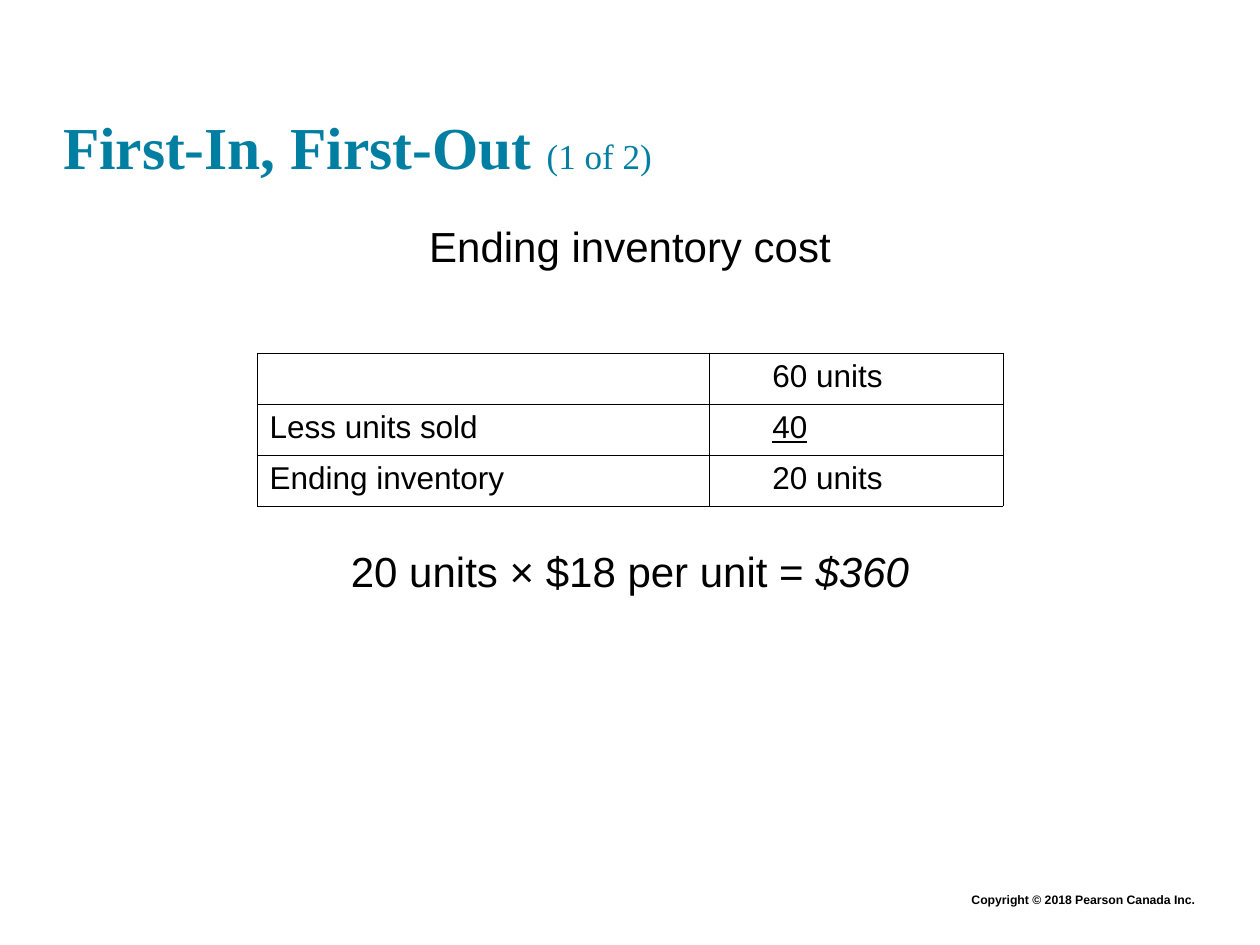
from dataclasses import dataclass

from lxml import etree
from pptx import Presentation
from pptx.dml.color import RGBColor
from pptx.enum.text import MSO_ANCHOR, MSO_AUTO_SIZE, PP_ALIGN
from pptx.oxml.ns import qn
from pptx.util import Cm, Pt

BOTTOM = MSO_ANCHOR.BOTTOM
NO_FIT = MSO_AUTO_SIZE.NONE
LEFT, CENTER, RIGHT = PP_ALIGN.LEFT, PP_ALIGN.CENTER, PP_ALIGN.RIGHT


@dataclass
class Theme:
    teal: RGBColor = RGBColor(0x00, 0x7F, 0xA3)
    black: RGBColor = RGBColor(0, 0, 0)
    head_font: str = "Times New Roman"
    body_font: str = "Arial"
    title: int = 34
    counter: int = 20
    body: int = 24
    cell: int = 18
    footer: int = 7
    border: float = 0.25


theme = Theme()


def write(p, texts, size, align=LEFT, color=theme.black, font=theme.body_font):
    """Fill a paragraph with runs, all in one base style."""
    p.alignment = align
    p.space_before = Pt(0)
    for text in texts:
        r = p.add_run()
        r.text = text
        r.font.name = font
        r.font.size = Pt(size)
        r.font.color.rgb = color
    return p.runs


def place(sp, top, height):
    """Set a placeholder on the full content width, without insets."""
    sp.left, sp.top, sp.width, sp.height = Cm(1.27), Cm(top), Cm(22.86), Cm(height)
    tf = sp.text_frame
    tf.margin_left = tf.margin_top = tf.margin_right = tf.margin_bottom = 0
    tf.auto_size = NO_FIT
    return tf


prs = Presentation()
prs.slide_width, prs.slide_height = Cm(25.4), Cm(19.05)
s = prs.slides.add_slide(prs.slide_layouts[3])

# Title
tf = place(s.shapes.title, 0.61, 3.05)
tf.vertical_anchor = BOTTOM
heading, counter = write(tf.paragraphs[0], ["First-In, First-Out ", "(1 of 2)"],
                         theme.title, color=theme.teal, font=theme.head_font)
heading.font.bold = True
counter.font.bold = False
counter.font.size = Pt(theme.counter)

# Centred lines above and below the table
lines = [
    (1, 4.45, 1.47, ["Ending inventory cost"]),
    (2, 11.0, 2.11, ["20 units × $18 per unit = ", "$360"]),
]
for idx, top, height, texts in lines:
    p = place(s.placeholders[idx], top, height).paragraphs[0]
    pPr = p._p.get_or_add_pPr()
    pPr.set("marL", "0")
    pPr.set("indent", "0")
    etree.SubElement(pPr, qn("a:buNone"))
    runs = write(p, texts, theme.body, CENTER)
runs[-1].font.italic = True

# Inventory table
rows = [
    ("", "60 units"),
    ("Less units sold", "40"),
    ("Ending inventory", "20 units"),
]
widths = [9.12, 5.92]
row_height = 1.03
table = s.shapes.add_table(len(rows), len(widths), Cm(5.18), Cm(7.11),
                           Cm(sum(widths)), Cm(row_height * len(rows))).table
table.first_row = table.horz_banding = False
for col, width in zip(table.columns, widths):
    col.width = Cm(width)
for i, row in enumerate(rows):
    table.rows[i].height = Cm(row_height)
    for j, text in enumerate(row):
        cell = table.cell(i, j)
        if text:
            runs = write(cell.text_frame.paragraphs[0], [text], theme.cell)
            runs[0].font.underline = text == "40"
        if j == 1:
            cell.margin_left = Cm(1.27)
        tcPr = cell._tc.get_or_add_tcPr()
        for side in ("a:lnL", "a:lnR", "a:lnT", "a:lnB"):
            ln = etree.SubElement(tcPr, qn(side), w=str(Pt(theme.border)))
            fill = etree.SubElement(ln, qn("a:solidFill"))
            etree.SubElement(fill, qn("a:srgbClr"), val=str(theme.black))
        cell.fill.background()

# Copyright line
tf = s.shapes.add_textbox(Cm(4.45), Cm(17.86), Cm(19.89), Cm(0.56)).text_frame
tf.word_wrap = True
runs = write(tf.paragraphs[0], ["Copyright © 2018 Pearson Canada Inc."],
             theme.footer, RIGHT)
runs[0].font.bold = True

prs.save("out.pptx")
